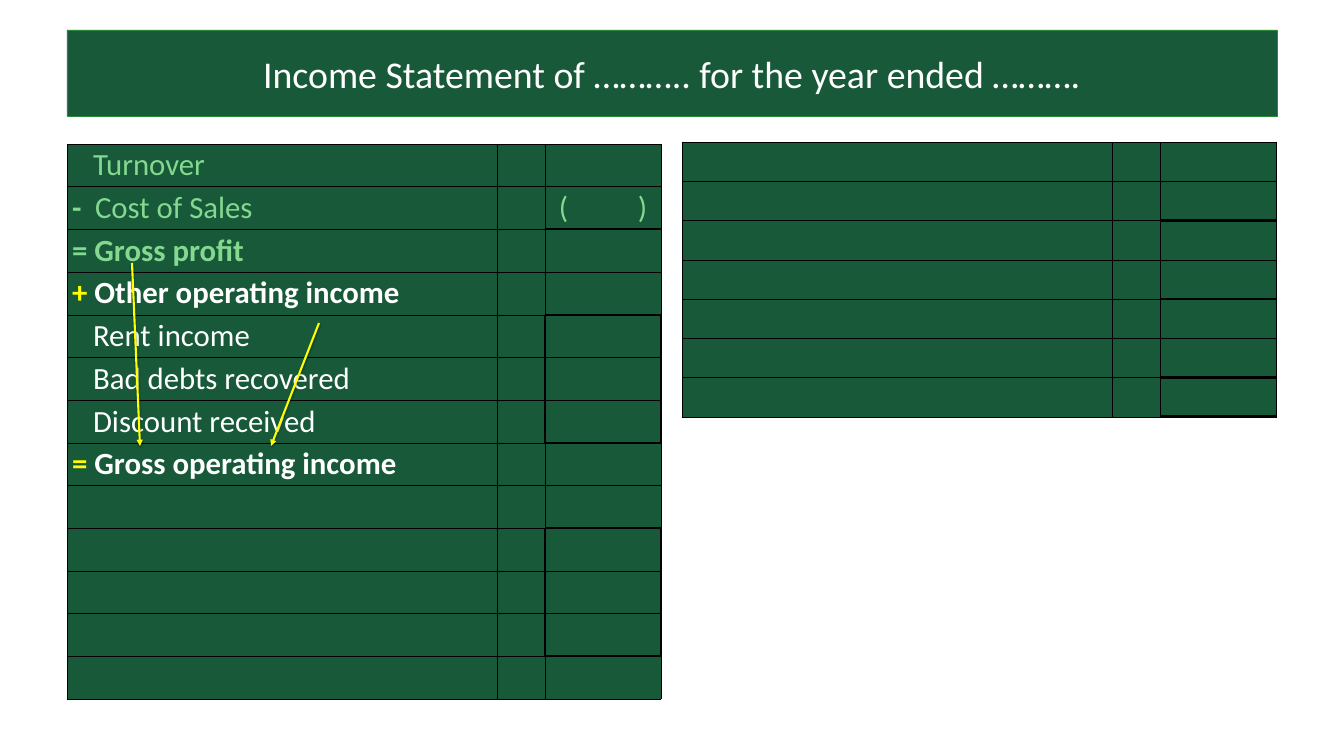
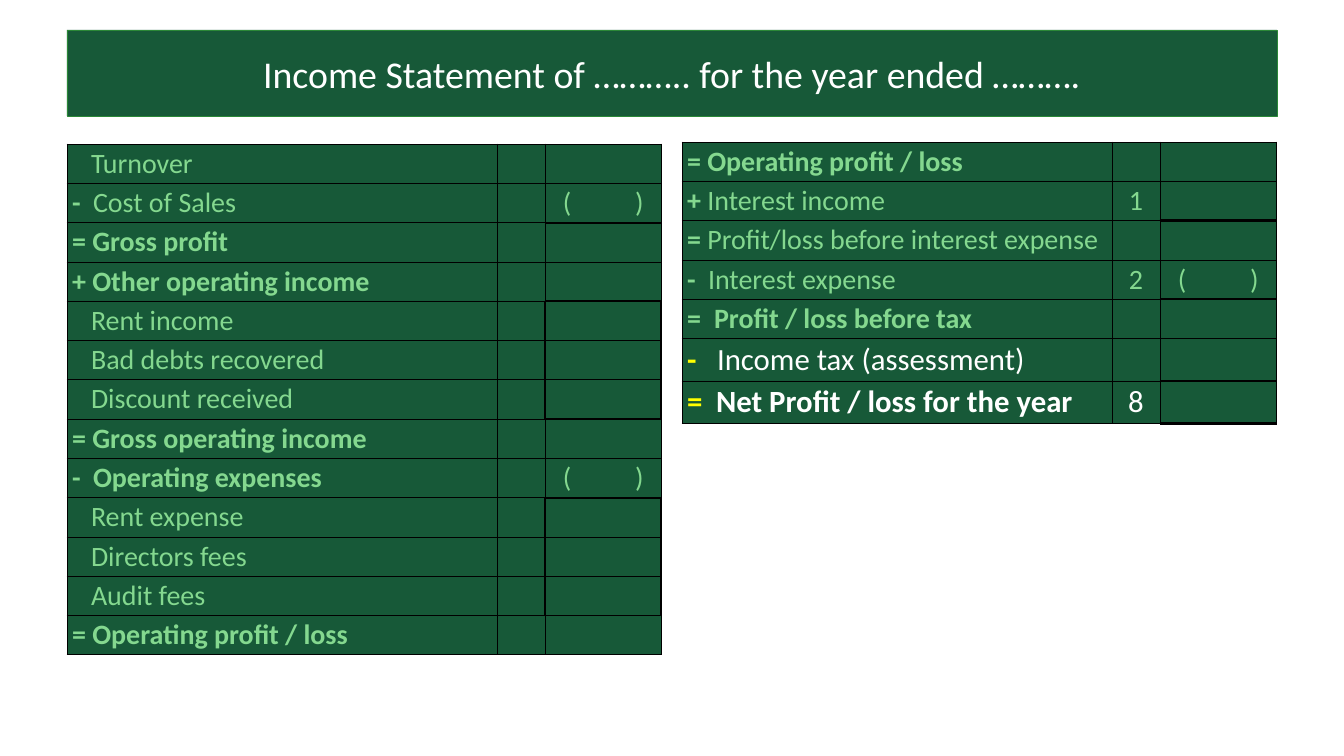
from dataclasses import dataclass

from lxml import etree
from pptx import Presentation
from pptx import util as u
from pptx.dml.color import RGBColor
from pptx.enum import shapes, text
from pptx.oxml.ns import qn

PINE = RGBColor(0x17, 0x59, 0x38)
LEAF = RGBColor(0x2B, 0x88, 0x37)
MINT = RGBColor(0x84, 0xD8, 0x8F)
YELLOW = RGBColor(0xFF, 0xFF, 0x00)
WHITE = RGBColor(0xFF, 0xFF, 0xFF)
BLACK = RGBColor(0x00, 0x00, 0x00)

FONT = "Calibri"
TITLE = "Income Statement of ……….. for the year ended ………."
COLUMNS = (430, 48, 116)
LEFT_TABLE = (67, 144)
RIGHT_TABLE = (682, 142)
NEW_SIZE = 44


@dataclass
class Entry:
    """One statement line; a new one stands out in white and yellow."""
    marker: str = ""
    label: str = ""
    bold: bool = False
    new: bool = False
    note: str = ""
    deducted: bool = False
    hang: int = 0


@dataclass
class Ruling:
    """Rows with a heavy line below, and rows with a boxed amount."""
    underlined: set
    boxed: set
    weight: float


LEFT_RULING = Ruling({1, 3, 6, 8, 11}, {4, 5, 6, 9, 10, 11}, 3)
RIGHT_RULING = Ruling({1, 3, 5, 6}, set(), 4.5)


def px(count):
    return u.Emu(round(count * 914400 / 50.4))


def set_font(font, size, color, bold=False):
    font.name, font.size, font.bold = FONT, u.Pt(size), bold
    font.color.rgb = color


def add_title(slide):
    band = slide.shapes.add_shape(shapes.MSO_SHAPE.RECTANGLE,
                                  px(67), px(30), px(1210), px(86))
    band.shadow.inherit = False
    band.fill.solid()
    band.fill.fore_color.rgb = PINE
    band.line.color.rgb = LEAF
    band.line.width = u.Pt(0.75)
    frame = band.text_frame
    frame.word_wrap = True
    frame.vertical_anchor = text.MSO_ANCHOR.MIDDLE
    heading = frame.paragraphs[0]
    heading.text = TITLE
    heading.alignment = text.PP_ALIGN.CENTER
    set_font(heading.font, 54, WHITE)


def draw_borders(cell, row, column, ruling):
    amount = column == len(COLUMNS) - 1
    boxed = row in ruling.boxed
    heavy = {
        "L": amount and boxed,
        "R": column > 0 and boxed,
        "T": amount and row - 1 in ruling.underlined,
        "B": amount and row in ruling.underlined,
    }
    properties = cell._tc.get_or_add_tcPr()
    for side, is_heavy in heavy.items():
        width = u.Pt(ruling.weight if is_heavy else 1)
        edge = etree.SubElement(properties, qn(f"a:ln{side}"), w=str(width))
        fill = etree.SubElement(edge, qn("a:solidFill"))
        etree.SubElement(fill, qn("a:srgbClr"), val=str(BLACK))


def write_label(cell, entry, size):
    """Marker and label, the label hanging at a fixed indent."""
    line = cell.text_frame.paragraphs[0]
    properties = line._p.get_or_add_pPr()
    color = WHITE if entry.new else MINT
    if not entry.marker:
        properties.set("marL", str(px(round(0.48 * size))))
    elif entry.marker.endswith("\t"):
        hang = px(entry.hang or round(0.53 * size))
        properties.set("marL", str(hang))
        properties.set("indent", str(-hang))
    if entry.marker:
        marker = line.add_run()
        marker.text = entry.marker
        set_font(marker.font, size, YELLOW if entry.new else MINT, True)
    label = line.add_run()
    label.text = entry.label
    set_font(label.font, size, color, entry.bold)


def write_note(cell, entry, size):
    line = cell.text_frame.paragraphs[0]
    line.text = entry.note
    line.alignment = text.PP_ALIGN.CENTER
    set_font(line.font, size, WHITE if entry.new else MINT)


def write_brackets(cell, size):
    """Brackets around an open amount, spread by a tab stop."""
    spread = round(1.8 * size)
    cell.margin_left = px(round((COLUMNS[2] - 2 * size) / 2))
    cell.margin_right = 0
    line = cell.text_frame.paragraphs[0]
    line.text = "(\t)"
    tabs = etree.SubElement(line._p.get_or_add_pPr(), qn("a:tabLst"))
    etree.SubElement(tabs, qn("a:tab"), pos=str(px(spread)), algn="l")
    set_font(line.font, size, MINT)


def add_statement(slide, place, height, entries, ruling, size):
    left, top = place
    table = slide.shapes.add_table(len(entries), len(COLUMNS), px(left), px(top),
                                   px(sum(COLUMNS)), px(height)).table
    table.first_row = table.horz_banding = False
    for column, width in zip(table.columns, COLUMNS):
        column.width = px(width)
    for r, entry in enumerate(entries):
        table.rows[r].height = px(height / len(entries))
        cells = table.rows[r].cells
        for c, cell in enumerate(cells):
            draw_borders(cell, r, c, ruling)
            cell.fill.solid()
            cell.fill.fore_color.rgb = PINE
            cell.vertical_anchor = text.MSO_ANCHOR.MIDDLE
        entry_size = NEW_SIZE if entry.new else size
        if entry.label:
            write_label(cells[0], entry, entry_size)
        if entry.note:
            write_note(cells[1], entry, entry_size)
        if entry.deducted:
            write_brackets(cells[2], entry_size)


def add_arrow(slide, start, end):
    arrow = slide.shapes.add_connector(shapes.MSO_CONNECTOR.STRAIGHT,
                                       *map(px, start + end))
    arrow.line.color.rgb = YELLOW
    arrow.line.width = u.Pt(3)
    etree.SubElement(arrow.line._get_or_add_ln(), qn("a:tailEnd"), type="triangle")
    effects = etree.SubElement(arrow._element.spPr, qn("a:effectLst"))
    shadow = etree.SubElement(effects, qn("a:outerShdw"), blurRad=str(u.Pt(3.1)),
                              dist=str(u.Pt(1.8)), dir="5400000", rotWithShape="0")
    shade = etree.SubElement(shadow, qn("a:srgbClr"), val=str(BLACK))
    etree.SubElement(shade, qn("a:alpha"), val="35000")


def income_entries(new):
    """Lines down to gross operating income; new marks the other income."""
    return [
        Entry(label="Turnover"),
        Entry("-\t", "Cost of Sales", deducted=True),
        Entry("= ", "Gross profit", bold=True),
        Entry("+ ", "Other operating income", bold=True, new=new),
        Entry(label="Rent income", new=new),
        Entry(label="Bad debts recovered", new=new),
        Entry(label="Discount received", new=new),
        Entry("= ", "Gross operating income", bold=True, new=new),
    ]


EXPENSES = [
    Entry("-\t", "Operating expenses", bold=True, deducted=True),
    Entry(label="Rent expense"),
    Entry(label="Directors fees"),
    Entry(label="Audit fees"),
    Entry("= ", "Operating profit / loss", bold=True),
]

PROFIT = [
    Entry("= ", "Operating profit / loss", bold=True),
    Entry("+ ", "Interest income", note="1"),
    Entry("= ", "Profit/loss before interest expense"),
    Entry("-\t", "Interest expense", note="2", deducted=True),
    Entry("=\t", "Profit / loss before tax", bold=True, hang=27),
    Entry("-\t", "Income tax (assessment)", new=True, hang=30),
    Entry("=\t", "Net Profit / loss for the year", bold=True, new=True,
          note="8", hang=29),
]


def add_page(deck):
    slide = deck.slides.add_slide(deck.slide_layouts[6])
    add_title(slide)
    return slide


def main():
    deck = Presentation()
    deck.slide_width, deck.slide_height = px(1344), px(756)

    income = add_page(deck)
    add_statement(income, LEFT_TABLE, 555,
                  income_entries(new=True) + [Entry()] * len(EXPENSES),
                  LEFT_RULING, NEW_SIZE)
    add_statement(income, RIGHT_TABLE, 275, [Entry()] * len(PROFIT),
                  RIGHT_RULING, 40)
    add_arrow(income, (132, 263), (140, 446))
    add_arrow(income, (319, 323), (271, 446))

    complete = add_page(deck)
    add_statement(complete, LEFT_TABLE, 511,
                  income_entries(new=False) + EXPENSES, LEFT_RULING, 40)
    add_statement(complete, RIGHT_TABLE, 275, PROFIT, RIGHT_RULING, 40)

    deck.save("out.pptx")


if __name__ == "__main__":
    main()
